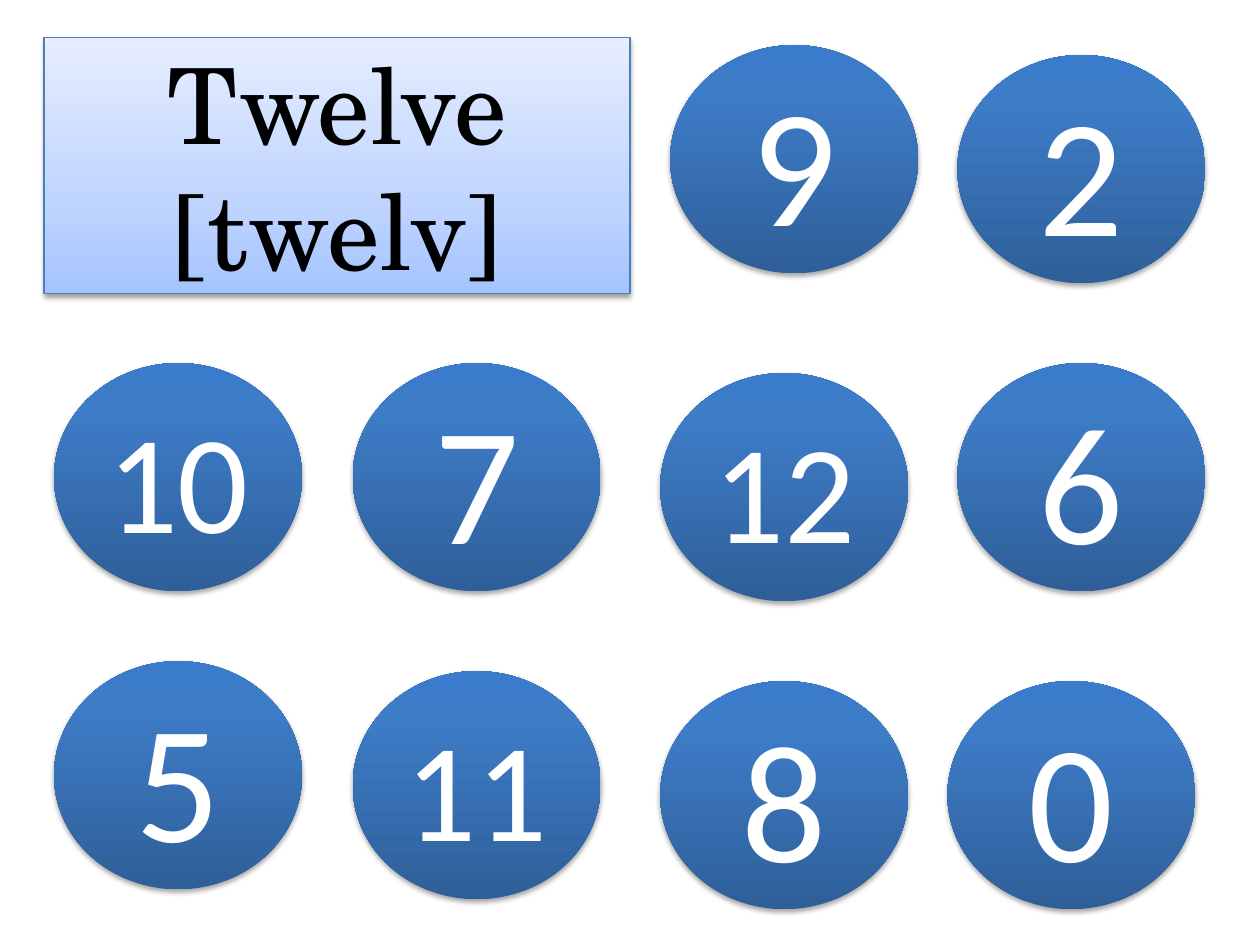
from lxml import etree
from pptx import Presentation
from pptx.dml.color import RGBColor
from pptx.enum.shapes import MSO_SHAPE
from pptx.enum.text import MSO_ANCHOR, PP_ALIGN
from pptx.oxml.ns import qn
from pptx.util import Cm, Pt

BLACK = RGBColor(0x00, 0x00, 0x00)
WHITE = RGBColor(0xFF, 0xFF, 0xFF)
CARD_LINE = RGBColor(0x4B, 0x7E, 0xBC)
# Gradient stops as (percent, colour), running from bottom to top
CARD_STOPS = [(0, RGBColor(0xA4, 0xC4, 0xFF)),
              (35, RGBColor(0xBF, 0xD4, 0xFF)),
              (100, RGBColor(0xE6, 0xEE, 0xFF))]
BALL_STOPS = [(0, RGBColor(0x2F, 0x5F, 0x99)),
              (80, RGBColor(0x3D, 0x7C, 0xC7)),
              (100, RGBColor(0x3A, 0x7C, 0xCB))]

# Grid of balls, in cm; each ball may be nudged by whole steps
COLS = [1.09, 7.11, 13.31, 19.3]
ROWS = [0.91, 7.32, 13.33]
STEP = 0.2
BALL_W, BALL_H = 5, 4.6
# (number, column, row, steps right, steps down)
BALLS = [("9", 2, 0, 1, 0), ("2", 3, 0, 0, 1),
         ("10", 0, 1, 0, 0), ("7", 1, 1, 0, 0),
         ("12", 2, 1, 0, 1), ("6", 3, 1, 0, 0),
         ("5", 0, 2, 0, 0), ("11", 1, 2, 0, 1),
         ("8", 2, 2, 0, 2), ("0", 3, 2, -1, 2)]


def add_color(parent, color, alpha=None):
    clr = etree.SubElement(parent, qn("a:srgbClr"), val=str(color))
    if alpha is not None:
        etree.SubElement(clr, qn("a:alpha"), val=str(alpha * 1000))


def set_gradient(sp, stops):
    grad = etree.Element(qn("a:gradFill"), rotWithShape="1")
    gs_lst = etree.SubElement(grad, qn("a:gsLst"))
    for pos, color in stops:
        add_color(etree.SubElement(gs_lst, qn("a:gs"), pos=str(pos * 1000)), color)
    etree.SubElement(grad, qn("a:lin"), ang=str(270 * 60000), scaled="0")
    sp.element.spPr.find(qn("a:prstGeom")).addnext(grad)


def set_shadow(sp, alpha, dist):
    sp.shadow.inherit = False
    effects = sp.element.spPr.find(qn("a:effectLst"))
    shadow = etree.SubElement(effects, qn("a:outerShdw"), blurRad=str(Pt(3.1)),
                              dist=str(Pt(dist)), dir=str(90 * 60000),
                              rotWithShape="0")
    add_color(shadow, BLACK, alpha)


def set_text(sp, text, font, size, color):
    tf = sp.text_frame
    tf.word_wrap = True
    tf.vertical_anchor = MSO_ANCHOR.MIDDLE
    p = tf.paragraphs[0]
    p.alignment = PP_ALIGN.CENTER
    r = p.add_run()
    r.text = text
    r.font.name = font
    r.font.size = Pt(size)
    r.font.color.rgb = color


def add_word_card(s, x, y, w, h):
    sp = s.shapes.add_shape(MSO_SHAPE.RECTANGLE, Cm(x), Cm(y), Cm(w), Cm(h))
    sp.line.color.rgb = CARD_LINE
    sp.line.width = Pt(0.75)
    set_gradient(sp, CARD_STOPS)
    set_shadow(sp, 38, 1.6)
    set_text(sp, "Twelve [twelv]", "TeX Gyre Schola", 60, BLACK)


def add_ball(s, x, y, w, h, number):
    sp = s.shapes.add_shape(MSO_SHAPE.OVAL, Cm(x), Cm(y), Cm(w), Cm(h))
    sp.line.fill.background()
    set_gradient(sp, BALL_STOPS)
    set_shadow(sp, 35, 1.8)
    set_text(sp, number, "Calibri", 96 if len(number) == 1 else 80, WHITE)


def main():
    prs = Presentation()
    prs.slide_width, prs.slide_height = Cm(25.4), Cm(19.05)
    s = prs.slides.add_slide(prs.slide_layouts[6])

    # Word to find
    add_word_card(s, 0.89, 0.76, 11.81, 5.16)

    # Numbers to choose from
    for number, col, row, right, down in BALLS:
        add_ball(s, COLS[col] + right * STEP, ROWS[row] + down * STEP,
                 BALL_W, BALL_H, number)

    prs.save("out.pptx")


if __name__ == "__main__":
    main()
